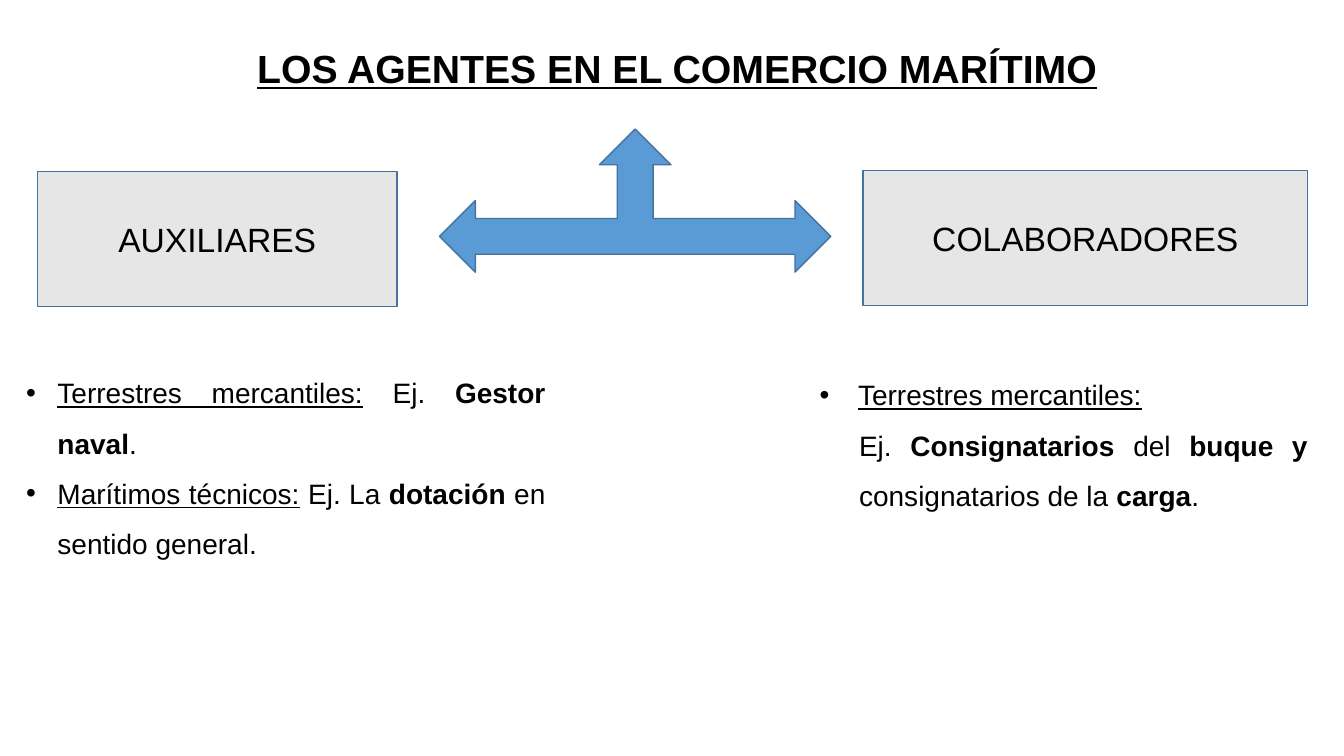
from lxml import etree
from pptx import Presentation
from pptx import util as u
from pptx.dml import color
from pptx.enum import shapes, text
from pptx.oxml import ns

COLORS = {"ink": "000000", "arrow": "5B9BD5", "box": "E7E6E6", "edge": "43739E"}
PLAIN = {"bold": False, "underline": False}
BOLD = {"bold": True, "underline": False}
UNDERLINED = {"bold": False, "underline": True}
HEADING = {"bold": True, "underline": True}


def add_run(paragraph, words, size, style):
    font_run = paragraph.add_run()
    font_run.text = words
    formats = {"name": "Arial", "size": u.Pt(size), **style}
    for key, value in formats.items():
        setattr(font_run.font, key, value)
    font_run.font.color.rgb = color.RGBColor.from_string(COLORS["ink"])


def place(item, *bounds):
    for key, value in zip(("left", "top", "width", "height"), bounds):
        setattr(item, key, u.Inches(value))


deck = Presentation()
deck.slide_width = u.Inches(13.33)
deck.slide_height = u.Inches(7.5)
slide = deck.slides.add_slide(deck.slide_layouts[3])

heading = slide.shapes.title
place(heading, 2.35, 0.39, 8.73, 0.57)
heading.text_frame.word_wrap = False
heading.text_frame.auto_size = text.MSO_AUTO_SIZE.NONE
heading_line = heading.text_frame.paragraphs[0]
heading_line.alignment = text.PP_ALIGN.CENTER
add_run(heading_line, "LOS AGENTES EN EL COMERCIO MARÍTIMO", 28, HEADING)

diagram = [
    (shapes.MSO_SHAPE.LEFT_RIGHT_UP_ARROW, (4.36, 1.28, 3.88, 1.42), "arrow", ""),
    (shapes.MSO_SHAPE.RECTANGLE, (0.37, 1.7, 3.57, 1.34), "box", "AUXILIARES"),
    (shapes.MSO_SHAPE.RECTANGLE, (8.56, 1.69, 4.41, 1.34), "box", "COLABORADORES"),
]
for outline, bounds, fill, label in diagram:
    agent = slide.shapes.add_shape(outline, *map(u.Inches, bounds))
    agent.shadow.inherit = False
    agent.fill.solid()
    agent.fill.fore_color.rgb = color.RGBColor.from_string(COLORS[fill])
    agent.line.color.rgb = color.RGBColor.from_string(COLORS["edge"])
    agent.line.width = u.Pt(1)
    if label:
        agent.text_frame.vertical_anchor = text.MSO_ANCHOR.MIDDLE
        label_line = agent.text_frame.paragraphs[0]
        label_line.alignment = text.PP_ALIGN.CENTER
        add_run(label_line, label, 24, PLAIN)

examples = {
    1: ((0.16, 3.51, 5.35, 2.12), [
        (0.31, True, [("Terrestres mercantiles:", UNDERLINED), (" Ej. ", PLAIN),
                      ("Gestor naval", BOLD), (".", PLAIN)]),
        (0.31, True, [("Marítimos técnicos:", UNDERLINED), (" Ej. La ", PLAIN),
                      ("dotación", BOLD), (" en sentido general.", PLAIN)]),
    ]),
    2: ((8.03, 3.53, 5.04, 1.92), [
        (0.38, True, [("Terrestres mercantiles:", UNDERLINED)]),
        (0.39, False, [("Ej. ", PLAIN), ("Consignatarios", BOLD), (" del ", PLAIN),
                       ("buque y", BOLD), (" consignatarios de la ", PLAIN),
                       ("carga", BOLD), (".", PLAIN)]),
    ]),
}
for index, (bounds, entries) in examples.items():
    column = slide.placeholders[index]
    place(column, *bounds)
    frame = column.text_frame
    frame.word_wrap = True
    frame.auto_size = text.MSO_AUTO_SIZE.NONE
    for position, (indent, bulleted, pieces) in enumerate(entries):
        entry = frame.add_paragraph() if position else frame.paragraphs[0]
        layout = {"alignment": text.PP_ALIGN.JUSTIFY, "line_spacing": 1.5,
                  "space_before": u.Pt(0), "space_after": u.Pt(0)}
        for key, value in layout.items():
            setattr(entry, key, value)
        properties = entry._p.get_or_add_pPr()
        properties.set("marL", str(u.Inches(indent)))
        properties.set("indent", str(-u.Inches(indent) if bulleted else 0))
        if bulleted:
            etree.SubElement(properties, ns.qn("a:buFont"), typeface="Arial")
            etree.SubElement(properties, ns.qn("a:buChar"), char="•")
        else:
            etree.SubElement(properties, ns.qn("a:buNone"))
        for words, style in pieces:
            add_run(entry, words, 20, style)

deck.save("out.pptx")
